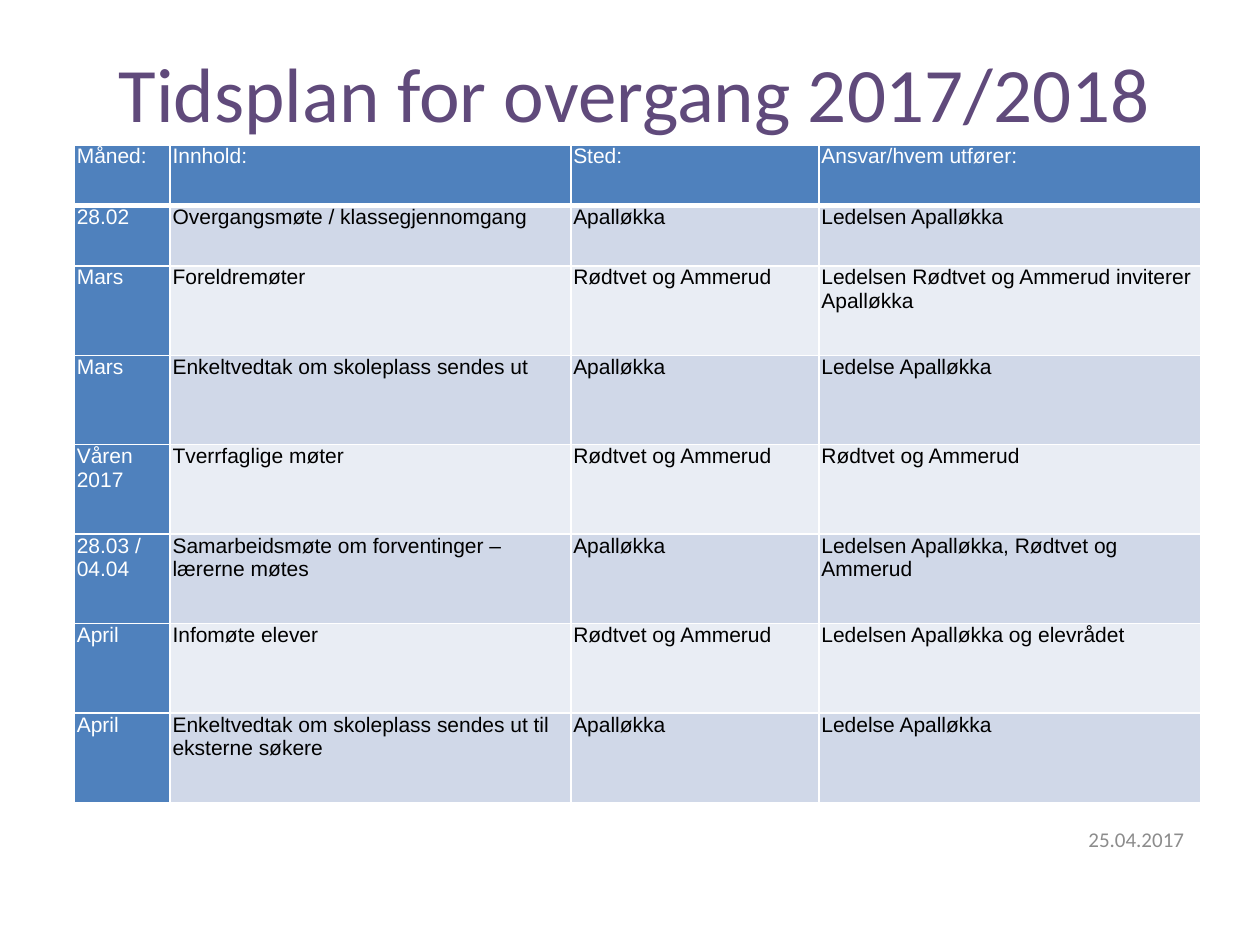
import pptx
import pptx.dml.color
import pptx.enum.text
import pptx.oxml
import pptx.oxml.ns
import pptx.util
from pptx.util import Inches

COLORS = {
    "title": "604A7B",
    "date": "8C8C8C",
    "head": "4F81BD",
    "band_dark": "D0D8E8",
    "band_light": "E9EDF4",
    "white": "FFFFFF",
    "black": "000000",
}
COL_WIDTHS = [0.76, 3.18, 1.97, 3.03]
ROW_HEIGHTS = [0.48] * 2 + [0.71] * 6
SCHEDULE = [
    ["Måned:", "Innhold:", "Sted:", "Ansvar/hvem utfører:"],
    ["28.02", "Overgangsmøte / klassegjennomgang", "Apalløkka", "Ledelsen Apalløkka"],
    ["Mars", "Foreldremøter", "Rødtvet og Ammerud",
     "Ledelsen Rødtvet og Ammerud inviterer Apalløkka"],
    ["Mars", "Enkeltvedtak om skoleplass sendes ut", "Apalløkka", "Ledelse Apalløkka"],
    ["Våren 2017", "Tverrfaglige møter", "Rødtvet og Ammerud", "Rødtvet og Ammerud"],
    ["28.03 / 04.04", "Samarbeidsmøte om forventinger – lærerne møtes", "Apalløkka",
     "Ledelsen Apalløkka, Rødtvet og Ammerud"],
    ["April", "Infomøte elever", "Rødtvet og Ammerud", "Ledelsen Apalløkka og elevrådet"],
    ["April", "Enkeltvedtak om skoleplass sendes ut til eksterne søkere", "Apalløkka",
     "Ledelse Apalløkka"],
]


def rgb(name):
    return pptx.dml.color.RGBColor.from_string(COLORS[name])


def write(p, text, font, size, color):
    r = p.add_run()
    r.text = text
    for key, value in {"name": font, "size": pptx.util.Pt(size)}.items():
        setattr(r.font, key, value)
    r.font.color.rgb = rgb(color)


def add_text(slide, box, text, size, color, align):
    tf = slide.shapes.add_textbox(*map(Inches, box)).text_frame
    tf.word_wrap = True
    tf.vertical_anchor = pptx.enum.text.MSO_ANCHOR.MIDDLE
    p = tf.paragraphs[0]
    p.alignment = align
    write(p, text, "Calibri", size, color)


def add_borders(cell, bottom):
    """Draw white cell borders, 1 pt except for the given bottom width."""
    tc_pr = cell._tc.get_or_add_tcPr()
    for side, width in {"L": 1, "R": 1, "T": 1, "B": bottom}.items():
        tc_pr.append(pptx.oxml.parse_xml(
            f'<a:ln{side} {pptx.oxml.ns.nsdecls("a")} w="{pptx.util.Pt(width)}">'
            f'<a:solidFill><a:srgbClr val="{COLORS["white"]}"/></a:solidFill>'
            f'</a:ln{side}>'))


def add_schedule(slide, box):
    table = slide.shapes.add_table(
        len(ROW_HEIGHTS), len(COL_WIDTHS), *map(Inches, box)).table
    for column, width in zip(table.columns, COL_WIDTHS):
        column.width = Inches(width)
    margins = {"margin_left": 0.02, "margin_top": 0, "margin_right": 0.02, "margin_bottom": 0}
    for i, (height, texts) in enumerate(zip(ROW_HEIGHTS, SCHEDULE)):
        table.rows[i].height = Inches(height)
        for j, text in enumerate(texts):
            cell = table.cell(i, j)
            is_head = i == 0 or j == 0
            for key, value in margins.items():
                setattr(cell, key, Inches(value))
            add_borders(cell, bottom=3 if i == 0 else 1)
            band = "band_dark" if i % 2 else "band_light"
            cell.fill.solid()
            cell.fill.fore_color.rgb = rgb("head" if is_head else band)
            p = cell.text_frame.paragraphs[0]
            write(p, text, "Arial", 12, "white" if is_head else "black")
            p.font.size = pptx.util.Pt(12)


def main():
    prs = pptx.Presentation()
    prs.slide_width, prs.slide_height = Inches(10), Inches(7.5)
    slide = prs.slides.add_slide(prs.slide_layouts[6])
    align = pptx.enum.text.PP_ALIGN
    add_text(slide, (8.54, 6.46, 1.21, 0.4), "25.04.2017", 12, "date", align.LEFT)
    add_text(slide, (0.51, 0.29, 9.06, 0.87), "Tidsplan for overgang 2017/2018",
             44, "title", align.CENTER)
    add_schedule(slide, (0.59, 1.15, sum(COL_WIDTHS), sum(ROW_HEIGHTS)))
    prs.save("out.pptx")


if __name__ == "__main__":
    main()
